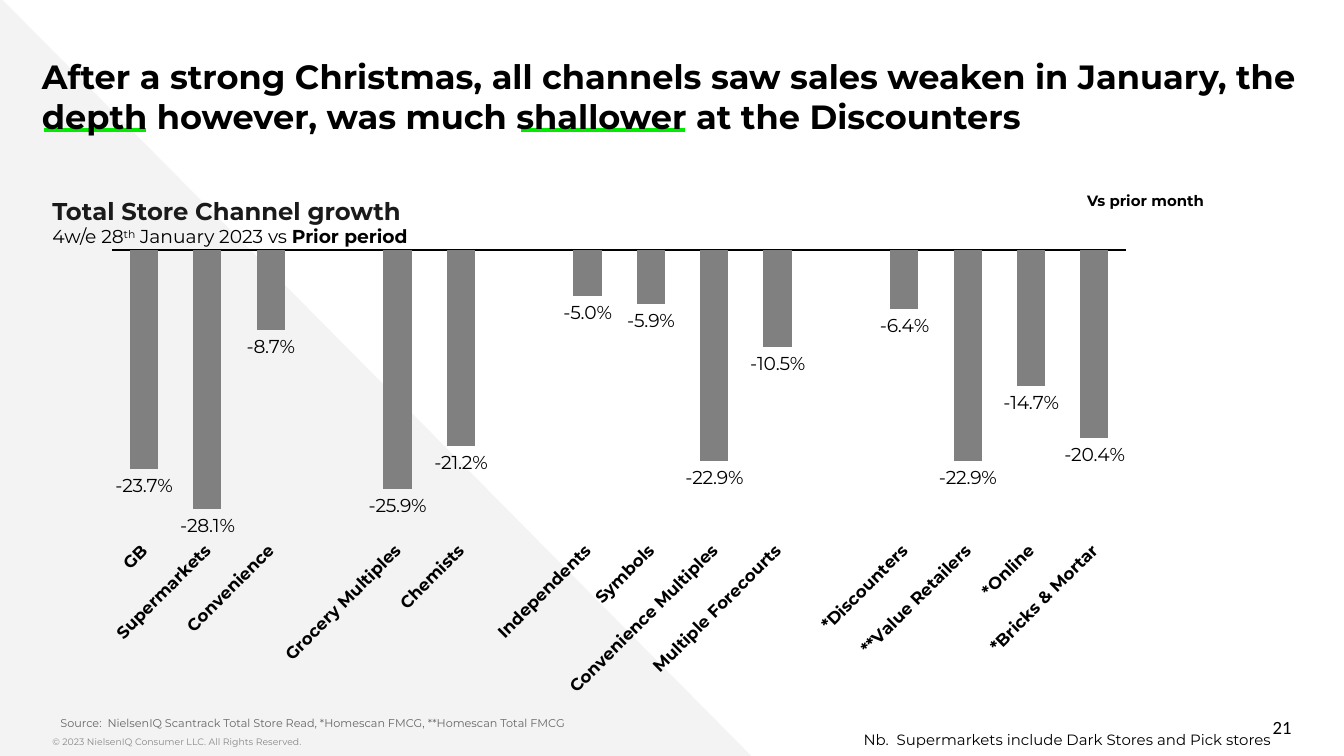
"""Build the January channel growth slide on a grid of tenth-of-an-inch cells."""
from typing import NamedTuple

from lxml import etree
from pptx import Presentation
from pptx import util as u
from pptx.chart.data import CategoryChartData
from pptx.dml.color import RGBColor
from pptx.enum import chart as ch
from pptx.enum import shapes, text
from pptx.oxml import parse_xml
from pptx.oxml.ns import nsdecls, qn

COLUMNS, ROWS = 100, 56.25
BRAND_FONT = "Montserrat"
LEFT, RIGHT = text.PP_ALIGN.LEFT, text.PP_ALIGN.RIGHT


class Box(NamedTuple):
    """Position and size in grid columns and rows, or in percent of a chart."""
    column: float
    row: float
    columns: float
    rows: float


class Run(NamedTuple):
    """A stretch of text in one format."""
    words: str
    size: float
    color: str = "000000"
    bold: bool = False
    font: str = BRAND_FONT
    raised: bool = False
    ends_line: bool = False


class Label(NamedTuple):
    """A text box with its runs, insets and alignment."""
    box: Box
    runs: list[Run]
    insets: tuple[float, float] = (0, 0.5)
    align: text.PP_ALIGN = LEFT
    anchor: text.MSO_ANCHOR = text.MSO_ANCHOR.TOP
    wrap: bool = True


class Underline(NamedTuple):
    """A highlight stroke under a title word."""
    start: float
    end: float
    row: float = 9.7


CHANNELS = [
    ("GB", -0.237), ("Supermarkets", -0.281), ("Convenience", -0.087), (" ", None),
    ("Grocery Multiples", -0.259), ("Chemists", -0.212), ("", None),
    ("Independents", -0.05), ("Symbols", -0.059), ("Convenience Multiples", -0.229),
    ("Multiple Forecourts", -0.105), ("", None),
    ("*Discounters", -0.064), ("**Value Retailers", -0.229), ("*Online", -0.147),
    ("*Bricks & Mortar", -0.204),
]

TITLE = Label(Box(3.12, 3.15, 95.6, 7), [
    Run("After a strong Christmas, all channels saw sales weaken in January, the depth "
        "however, was much shallower at the Discounters", 18, bold=True)], (0, 1))

LABELS = [
    Label(Box(3.9, 54.3, 55.4, 2),
          [Run("© 2023 NielsenIQ Consumer LLC. All Rights Reserved.", 5, "888888")]),
    Label(Box(73.6, 52.6, 22.5, 3), [Run("21", 10, font="Calibri")],
          align=RIGHT, anchor=text.MSO_ANCHOR.MIDDLE),
    Label(Box(3.9, 14.1, 41.6, 4.9), [
        Run("Total Store Channel growth", 13, "1A1A1A", True, ends_line=True),
        Run("4w/e 28", 10), Run("th", 10, raised=True),
        Run(" January 2023 vs ", 10), Run("Prior period", 10, bold=True)]),
    Label(Box(2.9, 52.3, 89.2, 2), [
        Run("Source:  NielsenIQ Scantrack Total Store Read, *Homescan FMCG, "
            "**Homescan Total FMCG", 6, "666666")], (1.6, 1)),
    Label(Box(62.9, 53.9, 32.7, 2.4),
          [Run("Nb.  Supermarkets include Dark Stores and Pick stores", 8)],
          (1, 0.5), RIGHT, wrap=False),
    Label(Box(79.9, 13.8, 10.9, 2.4), [Run("Vs prior month", 8, bold=True)],
          (1, 0.5), wrap=False),
]
UNDERLINES = [Underline(3.3, 10.9), Underline(38.8, 51)]


def cells(count: float) -> u.Emu:
    """Turn grid cells into a length."""
    return u.Inches(count / 10)


def place(box: Box) -> list[u.Emu]:
    """Give the lengths of a grid box."""
    return [cells(part) for part in box]


def color(code: str) -> RGBColor:
    """Turn a hex string into a colour."""
    return RGBColor.from_string(code)


def write(shape, label: Label) -> None:
    """Put the runs of a label into a shape."""
    frame = shape.text_frame
    frame.auto_size = text.MSO_AUTO_SIZE.NONE
    frame.word_wrap = label.wrap
    frame.vertical_anchor = label.anchor
    frame.margin_left = frame.margin_right = cells(label.insets[0])
    frame.margin_top = frame.margin_bottom = cells(label.insets[1])
    paragraph = frame.paragraphs[0]
    paragraph.alignment = label.align
    for part in label.runs:
        run = paragraph.add_run()
        run.text = part.words
        run.font.size, run.font.bold, run.font.name = u.Pt(part.size), part.bold, part.font
        run.font.color.rgb = color(part.color)
        if part.raised:
            run._r.get_or_add_rPr().set("baseline", "30000")
        if part.ends_line:
            paragraph.add_line_break()


def draw_backdrop(slide, box: Box) -> None:
    """Draw the pale triangle behind the content."""
    triangle = slide.shapes.add_shape(shapes.MSO_SHAPE.RIGHT_TRIANGLE, *place(box))
    triangle.shadow.inherit = False
    triangle.fill.solid()
    triangle.fill.fore_color.rgb = color("F3F3F3")
    triangle.line.fill.background()


def draw_underline(slide, stroke: Underline) -> None:
    """Draw a green stroke under a title word."""
    line = slide.shapes.add_connector(
        shapes.MSO_CONNECTOR.STRAIGHT, cells(stroke.start), cells(stroke.row),
        cells(stroke.end), cells(stroke.row))
    line.line.color.rgb = color("00EB00")
    line.line.width = u.Pt(2.25)
    etree.SubElement(line._element.spPr, qn("a:effectLst"))


def fix_plot_area(chart, box: Box) -> None:
    """Pin the inner plot area to percentages of the chart."""
    area = chart._chartSpace.find(".//" + qn("c:plotArea"))
    for layout in area.findall(qn("c:layout")):
        area.remove(layout)
    modes = '<c:xMode val="edge"/><c:yMode val="edge"/>'
    shares = "".join(f'<c:{name} val="{part / 100:.3f}"/>' for name, part in zip("xywh", box))
    area.insert(0, parse_xml(
        f'<c:layout {nsdecls("c")}><c:manualLayout><c:layoutTarget val="inner"/>'
        f"{modes}{shares}</c:manualLayout></c:layout>"))


def draw_growth_chart(slide, box: Box) -> None:
    """Draw the growth of each channel as columns."""
    data = CategoryChartData(number_format="0.0%")
    data.categories = [name for name, _ in CHANNELS]
    data.add_series("Series 1", [growth for _, growth in CHANNELS])
    chart = slide.shapes.add_chart(
        ch.XL_CHART_TYPE.COLUMN_CLUSTERED, *place(box), data).chart
    chart.has_legend = chart.has_title = False
    chart.font.size, chart.font.name = u.Pt(10), BRAND_FONT
    chart.font.color.rgb = color("000000")
    fix_plot_area(chart, Box(0.2, 4.3, 96.1, 58.5))

    growth_axis = chart.value_axis
    growth_axis.visible = growth_axis.has_major_gridlines = False
    growth_axis.minimum_scale, growth_axis.maximum_scale = -0.3, 0

    channel_axis = chart.category_axis
    channel_axis.tick_label_position = ch.XL_TICK_LABEL_POSITION.LOW
    channel_axis.major_tick_mark = ch.XL_TICK_MARK.NONE
    channel_axis.format.line.color.rgb = color("000000")
    channel_axis.format.line.width = u.Pt(0.75)
    names = channel_axis.tick_labels.font
    names.size, names.bold, names.name = u.Pt(9), True, BRAND_FONT
    names.color.rgb = color("000000")
    channel_axis._element.find(".//" + qn("a:bodyPr")).set("rot", "-2700000")

    plot = chart.plots[0]
    plot.gap_width, plot.vary_by_categories = 125, False
    columns = plot.series[0]
    columns.invert_if_negative = False
    columns.format.fill.solid()
    columns.format.fill.fore_color.rgb = color("808080")
    values = columns.data_labels
    values.show_value = True
    values.position = ch.XL_LABEL_POSITION.OUTSIDE_END
    values.number_format, values.number_format_is_linked = "0.0%", False


def main() -> None:
    """Build and save the slide."""
    deck = Presentation()
    deck.slide_width, deck.slide_height = cells(COLUMNS), cells(ROWS)
    slide = deck.slides.add_slide(deck.slide_layouts.get_by_name("Title Only"))
    draw_backdrop(slide, Box(0, -0.2, 55.9, 56.45))
    draw_growth_chart(slide, Box(8.2, 17.1, 78.5, 35.2))
    for label in LABELS:
        write(slide.shapes.add_textbox(*place(label.box)), label)
    for stroke in UNDERLINES:
        draw_underline(slide, stroke)
    title = slide.shapes.title
    title.left, title.top, title.width, title.height = place(TITLE.box)
    write(title, TITLE)
    slide.shapes._spTree.append(title._element)
    deck.save("out.pptx")


if __name__ == "__main__":
    main()
